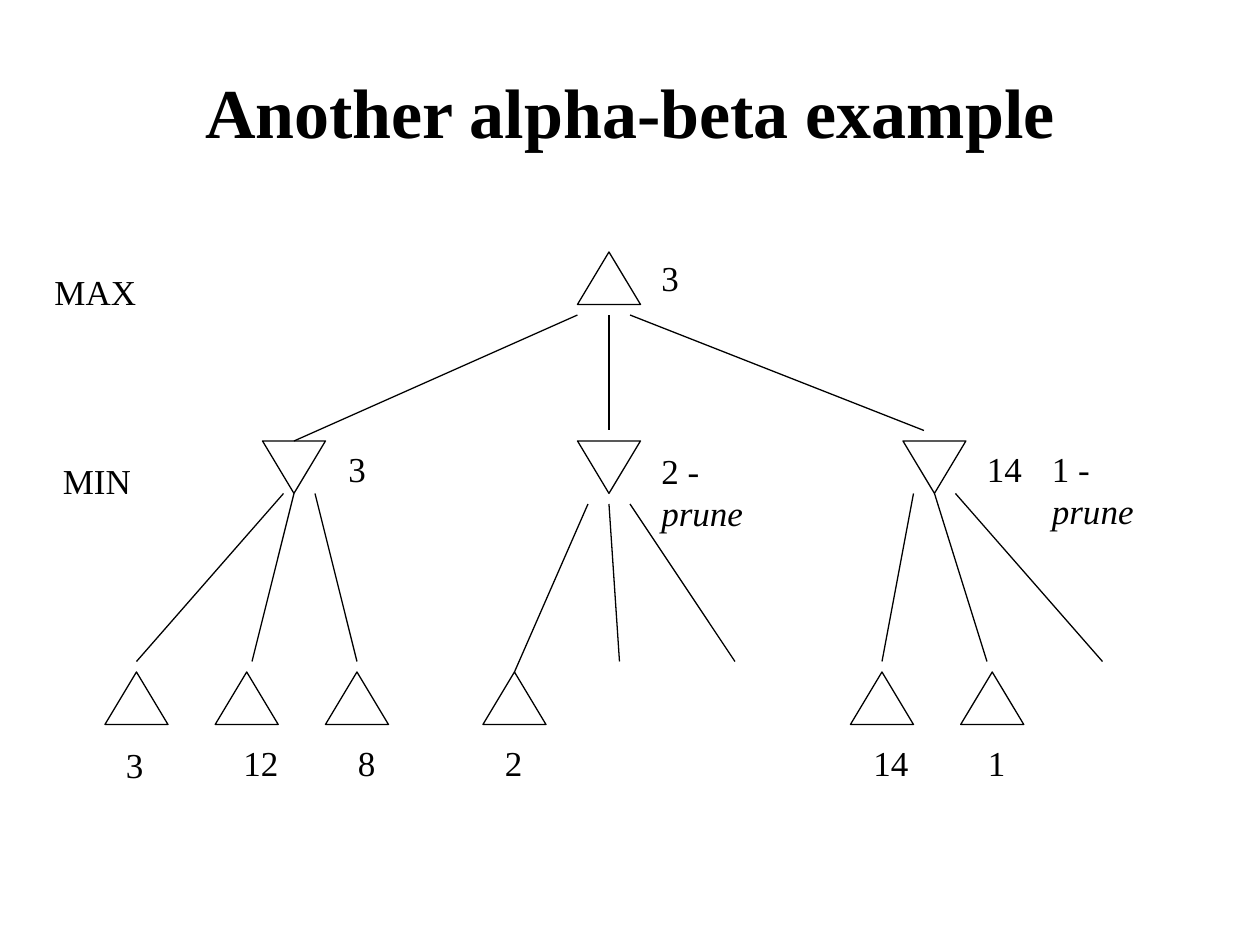
from lxml import etree
from pptx import Presentation
from pptx import util as u
from pptx.dml.color import RGBColor
from pptx.enum import shapes, text
from pptx.oxml.ns import qn

EMU_PER_PX = 7620
FONT = "Times New Roman"
BLACK, WHITE = "000000", "FFFFFF"
TITLE = "Another alpha-beta example"
NODE_WIDTH, NODE_HEIGHT = 60, 50
LABEL_HEIGHT = 52

LEVELS = [
    {"top": 240, "lefts": [550], "min": False},
    {"top": 420, "lefts": [250, 550, 860], "min": True},
    {"top": 640, "lefts": [100, 205, 310, 460, 810, 915], "min": False},
]

BRANCHES = [
    {"top": 300, "edges": [(550, 280, 420), (580, 580, 410), (600, 880, 410)]},
    {"top": 470, "edges": [(270, 130, 630), (280, 240, 630), (300, 340, 630)]},
    {"top": 480, "edges": [(560, 490, 640), (580, 590, 630), (600, 700, 630)]},
    {"top": 470, "edges": [(870, 840, 630), (890, 940, 630), (910, 1050, 630)]},
]

LABELS = [
    (40, 252, 102, "MAX", ""),
    (48, 432, 89, "MIN", ""),
    (618, 238, 41, "3", ""),
    (320, 420, 41, "3", ""),
    (618, 422, 146, "2 - ", "prune"),
    (928, 420, 58, "14", ""),
    (990, 420, 146, "1 - ", "prune"),
    (108, 702, 41, "3", ""),
    (220, 700, 58, "12", ""),
    (329, 700, 41, "8", ""),
    (469, 700, 41, "2", ""),
    (820, 700, 58, "14", ""),
    (929, 700, 41, "1", ""),
]


def px(*values):
    return [u.Emu(value * EMU_PER_PX) for value in values]


def color(value):
    return RGBColor.from_string(value)


def outline(shape):
    shape.line.color.rgb = color(BLACK)
    shape.line.width = u.Pt(0.75)


def add_node(page, left, top, is_min):
    node = page.shapes.add_shape(
        shapes.MSO_SHAPE.ISOSCELES_TRIANGLE, *px(left, top, NODE_WIDTH, NODE_HEIGHT))
    node.shadow.inherit = False
    node.fill.solid()
    node.fill.fore_color.rgb = color(WHITE)
    outline(node)
    if is_min:
        node._element.spPr.find(qn("a:xfrm")).set("flipV", "1")


def add_edge(page, start_x, start_y, end_x, end_y):
    edge = page.shapes.add_connector(
        shapes.MSO_CONNECTOR.STRAIGHT, *px(start_x, start_y, end_x, end_y))
    outline(edge)
    etree.SubElement(edge._element.spPr, qn("a:effectLst"))


def add_text(page, bounds, words, size):
    box = page.shapes.add_textbox(*px(*bounds))
    para = box.text_frame.paragraphs[0]
    para.font.name = FONT
    para.font.size = u.Pt(size)
    para.font.color.rgb = color(BLACK)
    para.add_run().text = words
    return box.text_frame, para


def add_title(page):
    frame, para = add_text(page, (90, 30, 1020, 150), TITLE, 40)
    frame.word_wrap = True
    frame.vertical_anchor = text.MSO_ANCHOR.MIDDLE
    para.alignment = text.PP_ALIGN.CENTER
    para.font.bold = True


def add_label(page, left, top, width, words, emphasis):
    frame, para = add_text(page, (left, top, width, LABEL_HEIGHT), words, 20)
    frame.word_wrap = False
    frame.auto_size = text.MSO_AUTO_SIZE.SHAPE_TO_FIT_TEXT
    if emphasis:
        span = para.add_run()
        span.text = emphasis
        span.font.italic = True


def main():
    deck = Presentation()
    deck.slide_width, deck.slide_height = px(1200, 900)
    page = deck.slides.add_slide(deck.slide_layouts[6])
    add_title(page)
    for level in LEVELS:
        for left in level["lefts"]:
            add_node(page, left, level["top"], level["min"])
    for branch in BRANCHES:
        for start_x, end_x, end_y in branch["edges"]:
            add_edge(page, start_x, branch["top"], end_x, end_y)
    for label in LABELS:
        add_label(page, *label)
    deck.save("out.pptx")


if __name__ == "__main__":
    main()
